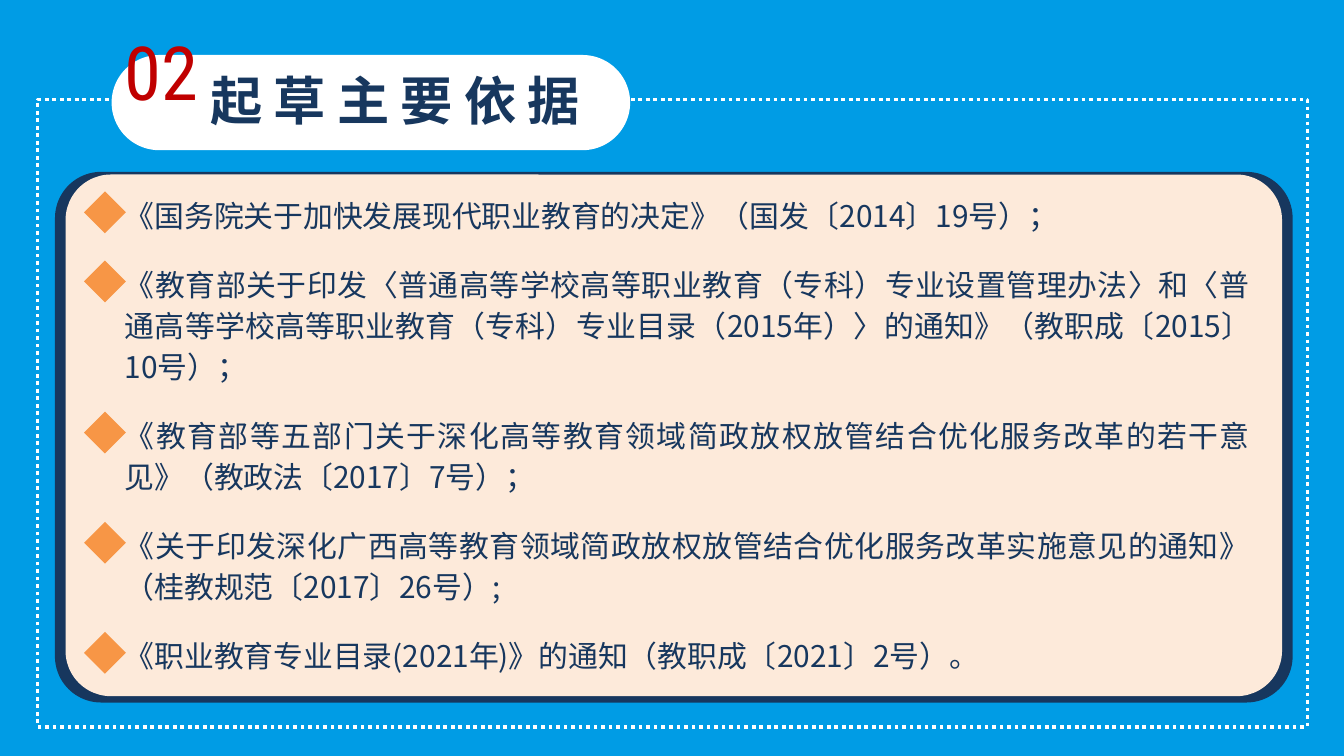
"""Build the slide listing the main sources behind the draft."""
from dataclasses import dataclass

from lxml import etree
from pptx import Presentation
from pptx.dml.color import RGBColor
from pptx.enum.dml import MSO_LINE
from pptx.enum.shapes import MSO_SHAPE
from pptx.enum.text import MSO_AUTO_SIZE, PP_ALIGN
from pptx.oxml.ns import qn
from pptx.util import Cm, Pt

ROUNDED = MSO_SHAPE.ROUNDED_RECTANGLE
RECTANGLE = MSO_SHAPE.RECTANGLE
DIAMOND = MSO_SHAPE.DIAMOND
DOTTED = MSO_LINE.ROUND_DOT
GROW = MSO_AUTO_SIZE.SHAPE_TO_FIT_TEXT
LEFT = PP_ALIGN.LEFT
JUSTIFY = PP_ALIGN.JUSTIFY


@dataclass(frozen=True)
class Theme:
    sky: str = "009CE5"
    navy: str = "17375E"
    cream: str = "FDEADA"
    white: str = "FFFFFF"
    red: str = "C00000"
    orange: str = "F79646"
    cjk_font: str = "Noto Sans CJK SC"
    number_font: str = "Roboto Condensed"
    number_size: int = 40
    title_size: int = 28
    body_size: int = 16
    leading: int = 22
    gap: int = 15


@dataclass(frozen=True)
class Box:
    left: float
    top: float
    width: float
    height: float

    def lengths(self) -> tuple:
        return Cm(self.left), Cm(self.top), Cm(self.width), Cm(self.height)


@dataclass(frozen=True)
class Panel:
    box: Box
    fill: str
    corner: float


@dataclass(frozen=True)
class TextStyle:
    font: str
    size: int
    color: str
    bold: bool = False
    tracking: int = 0
    outline: str = ""


@dataclass(frozen=True)
class Citation:
    text: str
    lines: int


THEME = Theme()
PANELS = (
    Panel(Box(1.04, 3.25, 23.39, 10.03), THEME.navy, 0.087),
    Panel(Box(1.24, 3.3, 22.99, 9.86), THEME.cream, 0.087),
)
FRAME = Box(0.71, 1.88, 24, 11.86)
TITLE_PILL = Panel(Box(2.11, 1.04, 9.8, 1.8), THEME.white, 0.5)
NUMBER_BOX = Box(2.11, 0.36, 2.01, 1.96)
TITLE_BOX = Box(3.73, 1.17, 8.18, 1.45)
BODY_BOX = Box(2.11, 3.51, 21.79, 9.4)
FIRST_MARKER = Box(1.59, 3.62, 0.79, 0.79)
NUMBER_STYLE = TextStyle(THEME.number_font, THEME.number_size, THEME.red, outline=THEME.white)
TITLE_STYLE = TextStyle(THEME.cjk_font, THEME.title_size, THEME.navy, bold=True, tracking=6)
BODY_STYLE = TextStyle(THEME.cjk_font, THEME.body_size, THEME.navy)
CITATIONS = (
    Citation("《国务院关于加快发展现代职业教育的决定》（国发〔2014〕19号）；", 1),
    Citation("《教育部关于印发〈普通高等学校高等职业教育（专科）专业设置管理办法〉和"
             "〈普通高等学校高等职业教育（专科）专业目录（2015年）〉的通知》"
             "（教职成〔2015〕10号）；", 3),
    Citation("《教育部等五部门关于深化高等教育领域简政放权放管结合优化服务改革的若干意见》"
             "（教政法〔2017〕7号）；", 2),
    Citation("《关于印发深化广西高等教育领域简政放权放管结合优化服务改革实施意见的通知》"
             "（桂教规范〔2017〕26号）;", 2),
    Citation("《职业教育专业目录(2021年)》的通知（教职成〔2021〕2号）。", 1),
)


def add_filled(slide, kind, box: Box, fill: str):
    shape = slide.shapes.add_shape(kind, *box.lengths())
    shape.shadow.inherit = False
    shape.fill.solid()
    shape.fill.fore_color.rgb = RGBColor.from_string(fill)
    shape.line.fill.background()
    return shape


def add_panel(slide, panel: Panel) -> None:
    add_filled(slide, ROUNDED, panel.box, panel.fill).adjustments[0] = panel.corner


def add_frame(slide, box: Box) -> None:
    frame = slide.shapes.add_shape(RECTANGLE, *box.lengths())
    frame.shadow.inherit = False
    frame.fill.background()
    frame.line.color.rgb = RGBColor.from_string(THEME.white)
    frame.line.width = Pt(2)
    frame.line.dash_style = DOTTED


def add_run(paragraph, text: str, style: TextStyle) -> None:
    run = paragraph.add_run()
    run.text = text
    run.font.name = style.font
    run.font.size = Pt(style.size)
    run.font.bold = style.bold
    run.font.color.rgb = RGBColor.from_string(style.color)
    properties = run.font._element
    east_asian = etree.Element(qn("a:ea"), typeface=style.font)
    properties.find(qn("a:latin")).addnext(east_asian)
    if style.tracking:
        properties.set("spc", str(style.tracking * 100))
    if style.outline:
        outline = etree.Element(qn("a:ln"), w=str(Pt(2.25)))
        paint = etree.SubElement(outline, qn("a:solidFill"))
        etree.SubElement(paint, qn("a:srgbClr"), val=style.outline)
        properties.insert(0, outline)


def add_text(slide, box: Box, texts: list[str], style: TextStyle, wrap: bool = True,
             align=LEFT, leading: int = 0, gap: int = 0) -> None:
    frame = slide.shapes.add_textbox(*box.lengths()).text_frame
    frame.word_wrap = wrap
    frame.auto_size = GROW
    for index, text in enumerate(texts):
        paragraph = frame.add_paragraph() if index else frame.paragraphs[0]
        paragraph.alignment = align
        if leading:
            paragraph.line_spacing = Pt(leading)
            paragraph.space_before = Pt(gap)
        add_run(paragraph, text, style)


def add_markers(slide, first: Box, citations: tuple[Citation, ...]) -> None:
    top = first.top
    for citation in citations:
        add_filled(slide, DIAMOND, Box(first.left, top, first.width, first.height), THEME.orange)
        top += Pt(citation.lines * THEME.leading + THEME.gap).cm


def main() -> None:
    deck = Presentation()
    deck.slide_width, deck.slide_height = Cm(25.4), Cm(14.29)
    slide = deck.slides.add_slide(deck.slide_layouts[6])
    slide.background.fill.solid()
    slide.background.fill.fore_color.rgb = RGBColor.from_string(THEME.sky)
    for panel in PANELS:
        add_panel(slide, panel)
    add_frame(slide, FRAME)
    add_panel(slide, TITLE_PILL)
    add_text(slide, NUMBER_BOX, ["02"], NUMBER_STYLE, wrap=False)
    add_text(slide, TITLE_BOX, ["起草主要依据"], TITLE_STYLE)
    add_text(slide, BODY_BOX, [citation.text for citation in CITATIONS], BODY_STYLE,
             align=JUSTIFY, leading=THEME.leading, gap=THEME.gap)
    add_markers(slide, FIRST_MARKER, CITATIONS)
    deck.save("out.pptx")


if __name__ == "__main__":
    main()
